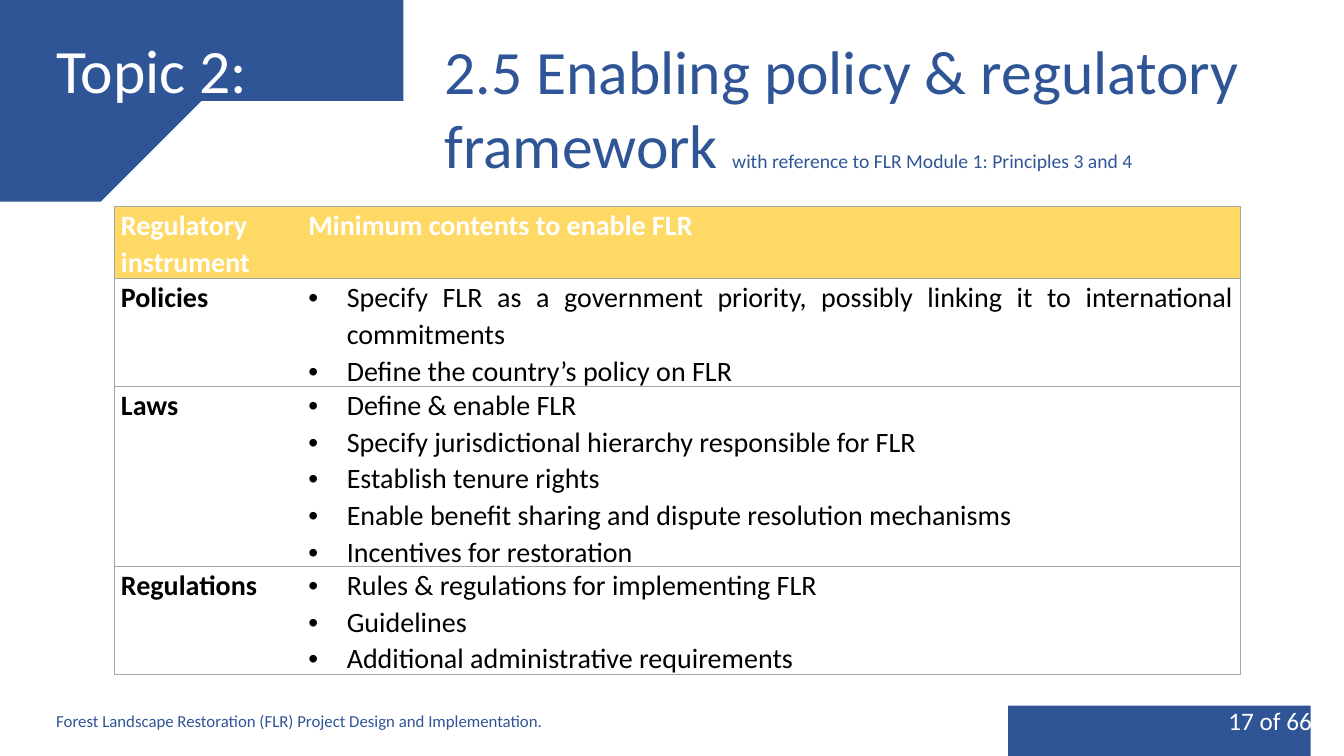
from lxml.etree import SubElement
from pptx import Presentation
from pptx.dml.color import RGBColor
from pptx.enum.text import MSO_ANCHOR, PP_ALIGN
from pptx.oxml import parse_xml
from pptx.oxml.ns import nsdecls, qn
from pptx.util import Inches, Pt

BLUE = RGBColor(0x2F, 0x55, 0x97)
GOLD = RGBColor(0xFF, 0xD9, 0x66)
GREY = RGBColor(0xA5, 0xA5, 0xA5)
WHITE = RGBColor(0xFF, 0xFF, 0xFF)
BLACK = RGBColor(0, 0, 0)

HEADER = ("Regulatory instrument", "Minimum contents to enable FLR")
INSTRUMENTS = [
    ("Policies", [
        "Specify FLR as a government priority, possibly linking it to international commitments",
        "Define the country’s policy on FLR",
    ]),
    ("Laws", [
        "Define & enable FLR",
        "Specify jurisdictional hierarchy responsible for FLR",
        "Establish tenure rights",
        "Enable benefit sharing and dispute resolution mechanisms",
        "Incentives for restoration",
    ]),
    ("Regulations", [
        "Rules & regulations for implementing FLR",
        "Guidelines",
        "Additional administrative requirements",
    ]),
]
COL_WIDTHS = (1.86, 9.31)
ROW_HEIGHTS = (0.71, 1.07, 1.78, 1.07)

TOP_BAND = [(0, 0), (4.46, 0), (3.76, 1.21), (2.2, 1.39), (1.42, 1.78), (0, 1.81)]
BOTTOM_BAND = [(13.32, 7.5), (9.6, 7.5), (10.14, 7.03), (11.47, 6.96),
               (12.13, 6.81), (13.33, 6.8)]


class SlideBuilder:
    font = "Calibri"
    table_size = 20

    def __init__(self, slide):
        self.s = slide

    def style(self, r, size, color, bold=False):
        r.font.name = self.font
        r.font.size = Pt(size)
        r.font.bold = bold
        r.font.color.rgb = color

    def band(self, points):
        fb = self.s.shapes.build_freeform(*points[0], scale=Inches(1))
        fb.add_line_segments(points[1:], close=True)
        sp = fb.convert_to_shape()
        sp.shadow.inherit = False
        sp.fill.solid()
        sp.fill.fore_color.rgb = BLUE
        sp.line.fill.background()

    def text(self, box, runs, color, align=PP_ALIGN.LEFT,
             anchor=MSO_ANCHOR.MIDDLE, spacing=1.0):
        tf = self.s.shapes.add_textbox(*map(Inches, box)).text_frame
        tf.word_wrap = True
        tf.vertical_anchor = anchor
        p = tf.paragraphs[0]
        p.alignment = align
        p.line_spacing = spacing
        for content, size in runs:
            r = p.add_run()
            r.text = content
            self.style(r, size, color)

    def bullet(self, p):
        p.alignment = PP_ALIGN.JUSTIFY
        pPr = p._p.get_or_add_pPr()
        pPr.set("marL", str(Inches(0.38)))
        pPr.set("indent", str(-Inches(0.38)))
        color = SubElement(pPr, qn("a:buClr"))
        SubElement(color, qn("a:srgbClr")).set("val", str(BLACK))
        SubElement(pPr, qn("a:buFont")).set("typeface", "Arial")
        SubElement(pPr, qn("a:buChar")).set("char", "•")

    def borders(self, cell, hidden):
        tcPr = cell._tc.get_or_add_tcPr()
        for i, side in enumerate("LRTB"):
            if side == hidden:
                fill = "<a:noFill/>"
            else:
                fill = f'<a:solidFill><a:srgbClr val="{GREY}"/></a:solidFill>'
            tcPr.insert(i, parse_xml(
                f'<a:ln{side} {nsdecls("a")} w="{Pt(0.5)}">{fill}</a:ln{side}>'))

    def cell(self, cell, lines, color, bold, fill, hidden, bulleted):
        cell.margin_left = cell.margin_right = Inches(0.07)
        cell.margin_top = cell.margin_bottom = 0
        if fill is None:
            cell.fill.background()
        else:
            cell.fill.solid()
            cell.fill.fore_color.rgb = fill
        self.borders(cell, hidden)
        tf = cell.text_frame
        tf.text = "\n".join(lines)
        for p in tf.paragraphs:
            p.line_spacing = 1.07
            if bulleted:
                self.bullet(p)
            for r in p.runs:
                self.style(r, self.table_size, color, bold)

    def table(self, left, top, header, rows):
        table = self.s.shapes.add_table(
            len(rows) + 1, len(header), Inches(left), Inches(top),
            Inches(sum(COL_WIDTHS)), Inches(sum(ROW_HEIGHTS))).table
        table.first_row = table.horz_banding = False
        for col, width in zip(table.columns, COL_WIDTHS):
            col.width = Inches(width)
        for row, height in zip(table.rows, ROW_HEIGHTS):
            row.height = Inches(height)
        for j, (title, hidden) in enumerate(zip(header, "RL")):
            self.cell(table.cell(0, j), [title], WHITE, True, GOLD, hidden, False)
        for i, (name, contents) in enumerate(rows, 1):
            self.cell(table.cell(i, 0), [name], BLACK, True, None, "R", False)
            self.cell(table.cell(i, 1), contents, BLACK, False, None, "L", True)


def main():
    prs = Presentation()
    prs.slide_width = Inches(13.33)
    prs.slide_height = Inches(7.5)
    b = SlideBuilder(prs.slides.add_slide(prs.slide_layouts[6]))

    b.band(TOP_BAND)
    b.band(BOTTOM_BAND)
    b.text((0.46, 6.95, 8, 0.4),
           [("Forest Landscape Restoration (FLR) Project Design and Implementation.", 12)],
           BLUE)
    b.text((0.46, 0, 4.64, 1.45), [("Topic 2:", 44)], WHITE, spacing=0.9)
    b.text((4.31, 0.28, 8.69, 1.58),
           [("2.5 Enabling policy & regulatory framework ", 44),
            ("with reference to FLR Module 1: Principles 3 and 4", 14)],
           BLUE, anchor=MSO_ANCHOR.TOP)
    b.table(1.13, 2.05, HEADER, INSTRUMENTS)
    b.text((11.73, 6.95, 1.38, 0.4), [("17 of 66", 18)], WHITE, PP_ALIGN.RIGHT)

    prs.save("out.pptx")


if __name__ == "__main__":
    main()
